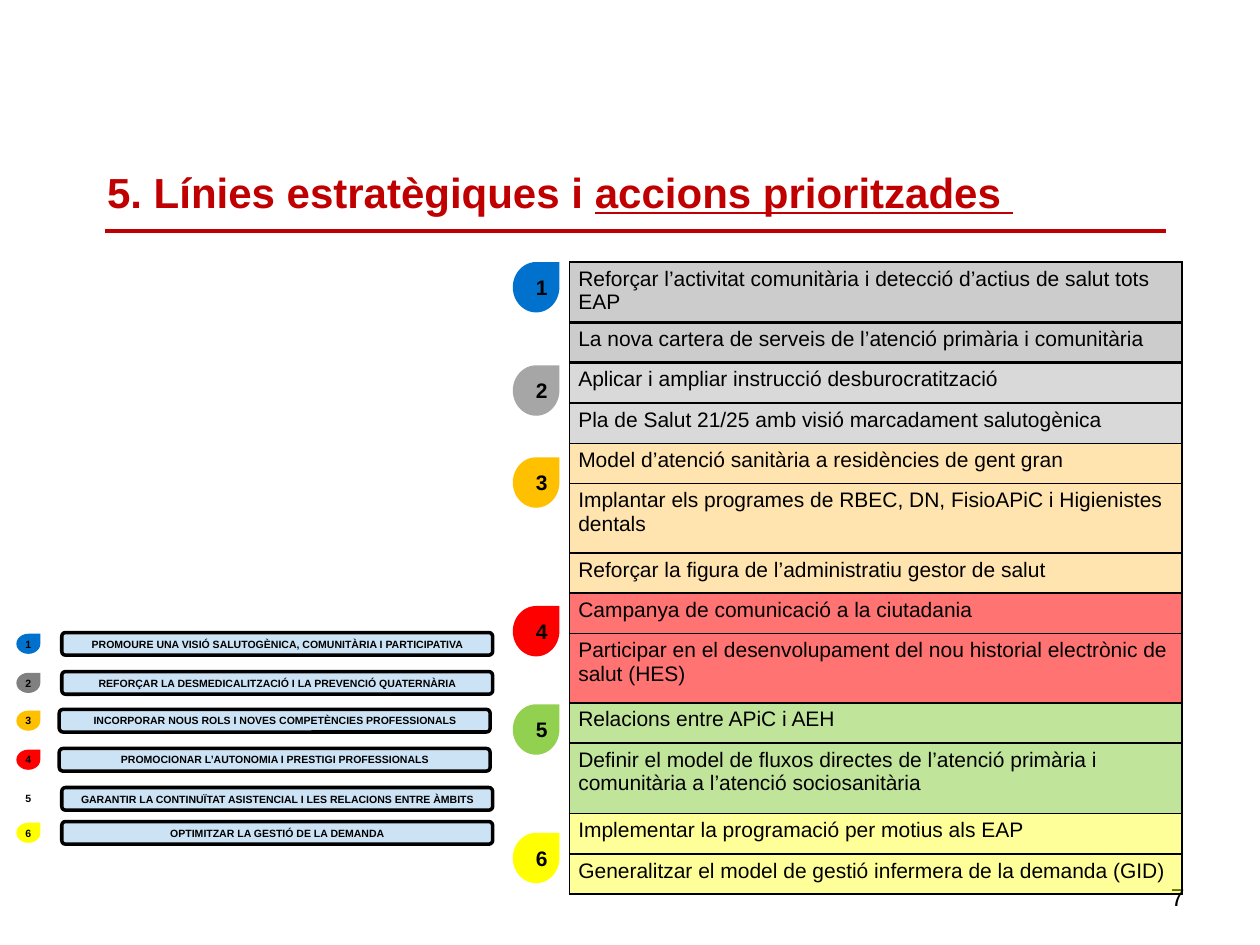
from dataclasses import dataclass

from lxml.etree import SubElement
from pptx import Presentation
from pptx.dml.color import RGBColor
from pptx.enum.shapes import MSO_CONNECTOR as Connector, MSO_SHAPE as Shape
from pptx.enum.text import MSO_ANCHOR as Anchor, PP_ALIGN as Align
from pptx.oxml import parse_xml
from pptx.oxml.ns import nsdecls, qn
from pptx.util import Inches, Pt


@dataclass(frozen=True)
class Theme:
    font: str = "Arial"
    ink: str = "000000"
    accent: str = "C00000"
    bar: str = "CCE3F5"
    title: int = 24
    number: int = 14
    body: int = 12
    small: int = 6


THEME = Theme()

# Strategic lines: text, bar left, bar top, drop colour
LINES = [
    ("PROMOURE UNA VISIÓ SALUTOGÈNICA, COMUNITÀRIA I PARTICIPATIVA", 0.49, 5.02, "0072CE"),
    ("REFORÇAR LA DESMEDICALITZACIÓ I LA PREVENCIÓ QUATERNÀRIA", 0.49, 5.33, "808080"),
    ("INCORPORAR NOUS ROLS I NOVES COMPETÈNCIES PROFESSIONALS", 0.47, 5.63, "FFC000"),
    ("PROMOCIONAR L’AUTONOMIA I PRESTIGI PROFESSIONALS", 0.47, 5.94, "FF0000"),
    ("GARANTIR LA CONTINUÏTAT ASISTENCIAL I LES RELACIONS ENTRE ÀMBITS", 0.49, 6.25, "FFFFFF"),
    ("OPTIMITZAR LA GESTIÓ DE LA DEMANDA", 0.49, 6.52, "FFFF00"),
]

# Actions: text, row height, fill colour, opacity in percent
ACTIONS = [
    ("Reforçar l’activitat comunitària i detecció d’actius de salut tots EAP", 0.31, "CCCCCC", 100),
    ("La nova cartera de serveis de l’atenció primària i comunitària", 0.32, "CCCCCC", 100),
    ("Aplicar i ampliar instrucció desburocratització", 0.32, "D9D9D9", 100),
    ("Pla de Salut 21/25 amb visió marcadament salutogènica", 0.32, "D9D9D9", 100),
    ("Model d’atenció sanitària a residències de gent gran", 0.32, "FFCC66", 52),
    ("Implantar els programes de RBEC, DN, FisioAPiC i Higienistes dentals", 0.55, "FFCC66", 52),
    ("Reforçar la figura de l’administratiu gestor de salut", 0.32, "FFCC66", 52),
    ("Campanya de comunicació a la ciutadania", 0.32, "FF0000", 55),
    ("Participar en el desenvolupament del nou historial electrònic de salut (HES)", 0.55, "FF0000", 55),
    ("Relacions entre APiC i AEH", 0.32, "92D050", 57),
    ("Definir el model de fluxos directes de l’atenció primària i comunitària "
     "a l’atenció sociosanitària", 0.56, "92D050", 57),
    ("Implementar la programació per motius als EAP", 0.32, "FFFF00", 40),
    ("Generalitzar el model de gestió infermera de la demanda (GID)", 0.32, "FFFF00", 40),
]
THICK_RULES = (1, 2)  # horizontal rules of the table drawn at 2 pt

# Large drops beside the table: top, colour
MARKERS = [(2.08, "0072CE"), (2.9, "A6A6A6"), (3.63, "FFC000"),
           (4.81, "FF0000"), (5.59, "92D050"), (6.61, "FFFF00")]


def add_span(para, text, size, color=THEME.ink, bold=False, underline=None):
    span = para.add_run()
    span.text = text
    font = span.font
    font.name, font.size, font.bold, font.underline = THEME.font, Pt(size), bold, underline
    font.color.rgb = RGBColor.from_string(color)


def add_label_shape(page, kind, box, fill, text, size, inset=None):
    shape = page.shapes.add_shape(kind, *map(Inches, box))
    shape.shadow.inherit = False
    shape.fill.solid()
    shape.fill.fore_color.rgb = RGBColor.from_string(fill)
    shape.line.fill.background()
    frame = shape.text_frame
    frame.vertical_anchor = Anchor.MIDDLE
    if inset is not None:
        frame.margin_left = frame.margin_right = Inches(inset)
        frame.margin_top = frame.margin_bottom = Inches(inset)
    para = frame.paragraphs[0]
    para.alignment = Align.CENTER
    add_span(para, text, size, bold=True)
    return shape


def add_drop(page, box, fill, number, size):
    add_label_shape(page, Shape.TEAR, box, fill, str(number), size, inset=0.13)


def place_title(page, box):
    title = page.shapes.title
    title.left, title.top, title.width, title.height = map(Inches, box)
    frame = title.text_frame
    frame.word_wrap = True
    frame.vertical_anchor = Anchor.BOTTOM
    para = frame.paragraphs[0]
    para.alignment = Align.LEFT
    add_span(para, "5. Línies estratègiques i ", THEME.title, THEME.accent, True)
    add_span(para, "accions prioritzades ", THEME.title, THEME.accent, True, True)

    # Rule under the title
    left, top, width, height = box
    y = Inches(top + height + 0.06)
    rule = page.shapes.add_connector(
        Connector.STRAIGHT, Inches(left + 0.08), y, Inches(left + width), y)
    rule.line.color.rgb = RGBColor.from_string(THEME.accent)
    rule.line.width = Pt(2.25)
    SubElement(rule._element.spPr, qn("a:effectLst"))


def place_page_number(page, box):
    para = page.shapes.add_textbox(*map(Inches, box)).text_frame.paragraphs[0]
    para.alignment = Align.RIGHT
    add_span(para, "7", THEME.number)


def place_strategic_lines(page, drop_left):
    for number, (text, left, top, color) in enumerate(LINES, 1):
        bar = add_label_shape(page, Shape.ROUNDED_RECTANGLE, (left, top, 3.42, 0.18),
                              THEME.bar, text, THEME.small)
        bar.line.color.rgb = RGBColor.from_string(THEME.ink)
        bar.line.width = Pt(2)
        add_drop(page, (drop_left, top + 0.01, 0.19, 0.16), color, number, THEME.small)


def set_borders(cell, widths):
    # Borders come before the fill in the cell properties
    props = cell._tc.get_or_add_tcPr()
    for index, (side, width) in enumerate(zip("LRTB", widths)):
        props.insert(index, parse_xml(
            f'<a:ln{side} {nsdecls("a")} w="{Pt(width)}"><a:solidFill>'
            f'<a:srgbClr val="{THEME.ink}"/></a:solidFill></a:ln{side}>'))


def place_actions(page, box):
    table = page.shapes.add_table(len(ACTIONS), 1, *map(Inches, box)).table
    table.first_row = table.horz_banding = False
    table.columns[0].width = Inches(box[2])
    for index, (text, height, color, opacity) in enumerate(ACTIONS):
        table.rows[index].height = Inches(height)
        cell = table.cell(index, 0)
        cell.margin_left = cell.margin_right = Inches(0.07)
        cell.margin_top = cell.margin_bottom = Inches(0.04)
        add_span(cell.text_frame.paragraphs[0], text, THEME.body)
        cell.fill.solid()
        cell.fill.fore_color.rgb = RGBColor.from_string(color)
        if opacity < 100:
            tint = cell._tc.tcPr.find(".//" + qn("a:srgbClr"))
            SubElement(tint, qn("a:alpha"), val=str(opacity * 1000))
        above, below = (2 if rule in THICK_RULES else 1 for rule in (index, index + 1))
        set_borders(cell, (1, 1, above, below))


def place_markers(page, left):
    for number, (top, color) in enumerate(MARKERS, 1):
        add_drop(page, (left, top, 0.37, 0.4), color, number, THEME.body)


def main():
    deck = Presentation()
    deck.slide_width, deck.slide_height = Inches(10), Inches(7.5)
    page = deck.slides.add_slide(deck.slide_layouts[5])
    place_title(page, (0.75, 0.67, 8.5, 1.1))
    place_page_number(page, (7.17, 6.95, 2.33, 0.4))
    place_strategic_lines(page, 0.13)
    place_actions(page, (4.52, 2.08, 4.86, 5.02))
    place_markers(page, 4.07)
    deck.save("out.pptx")


if __name__ == "__main__":
    main()
